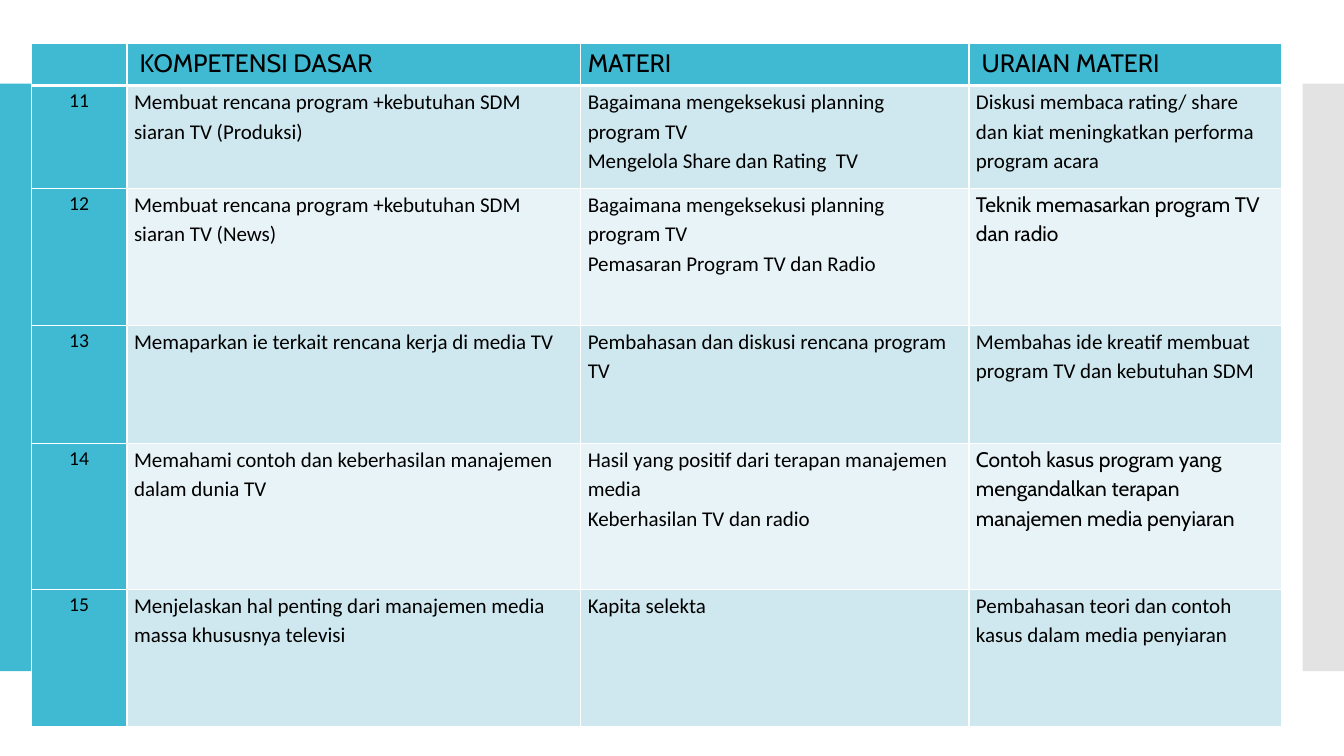
from lxml import etree
from pptx import Presentation
from pptx.dml.color import RGBColor
from pptx.enum.shapes import MSO_SHAPE
from pptx.enum.text import PP_ALIGN
from pptx.oxml.ns import qn
from pptx.util import Pt

PX = 9144
RECTANGLE = MSO_SHAPE.RECTANGLE
CENTER, LEFT = PP_ALIGN.CENTER, PP_ALIGN.LEFT
COLORS = {
    "accent": "40BAD2",
    "side": "C8C8C8",
    "odd": "CFE7EE",
    "even": "E8F3F7",
    "text": "000000",
    "border": "FFFFFF",
}
COLUMN_WIDTHS = [95, 450, 385, 310]
ROW_HEIGHTS = [42, 102, 136, 117, 145, 136]
HEADINGS = ["", " KOMPETENSI DASAR", "MATERI", " URAIAN MATERI"]
MEETINGS = [
    ["11", "Membuat rencana program +kebutuhan SDM siaran TV (Produksi)",
     "Bagaimana mengeksekusi planning program TV\nMengelola Share dan Rating  TV",
     "Diskusi membaca rating/ share dan kiat meningkatkan performa program acara"],
    ["12", "Membuat rencana program +kebutuhan SDM siaran TV (News)",
     "Bagaimana mengeksekusi planning program TV\nPemasaran Program TV dan Radio",
     "Teknik memasarkan program TV dan radio"],
    ["13", "Memaparkan ie terkait rencana kerja di media TV",
     "Pembahasan dan diskusi rencana program TV",
     "Membahas ide kreatif membuat program TV dan kebutuhan SDM"],
    ["14", "Memahami contoh dan keberhasilan manajemen dalam dunia TV",
     "Hasil yang positif dari terapan manajemen media\nKeberhasilan TV dan radio",
     "Contoh kasus program yang mengandalkan terapan manajemen media penyiaran"],
    ["15", "Menjelaskan hal penting dari manajemen media massa khususnya televisi",
     "Kapita selekta",
     "Pembahasan teori dan contoh kasus dalam media penyiaran"],
]


def rgb(name):
    """Return the named color."""
    return RGBColor.from_string(COLORS[name])


def add_side_bar(slide, box, color, opacity=100):
    """Draw a plain bar in the given box."""
    shape = slide.shapes.add_shape(RECTANGLE, *(length * PX for length in box))
    shape.shadow.inherit = False
    shape.line.fill.background()
    shape.fill.solid()
    shape.fill.fore_color.rgb = rgb(color)
    if opacity < 100:
        color_element = next(shape.element.spPr.iter(qn("a:srgbClr")))
        etree.SubElement(color_element, qn("a:alpha"), val=str(opacity * 1000))


def set_borders(cell, top, bottom):
    """Line the cell in white, with top and bottom widths in points."""
    properties = cell._tc.get_or_add_tcPr()
    sides = [("a:lnL", 1), ("a:lnR", 1), ("a:lnT", top), ("a:lnB", bottom)]
    for position, (tag, width) in enumerate(sides):
        line = etree.Element(qn(tag), w=str(Pt(width)))
        fill = etree.SubElement(line, qn("a:solidFill"))
        etree.SubElement(fill, qn("a:srgbClr"), val=COLORS["border"])
        properties.insert(position, line)


def write_cell(cell, text, size, font, alignment):
    """Write each line of the text as a paragraph of the cell."""
    cell.margin_left = cell.margin_right = 7 * PX
    cell.margin_top = cell.margin_bottom = 0
    frame = cell.text_frame
    for number, words in enumerate(text.split("\n")):
        paragraph = frame.add_paragraph() if number else frame.paragraphs[0]
        paragraph.alignment = alignment
        paragraph.line_spacing = 1.15
        if words:
            run = paragraph.add_run()
            run.text = words
            run.font.size = Pt(size)
            run.font.name = font
            run.font.bold = False
            run.font.color.rgb = rgb("text")


def cell_style(row, column):
    """Return fill, text size, font and alignment for a table position."""
    if row == 0:
        return "accent", 18, "Cabin", LEFT
    if column == 0:
        return "accent", 14, "Calibri", CENTER
    even = row % 2 == 0
    font = "Cabin" if even and column == 3 else "Calibri"
    return "even" if even else "odd", 15, font, LEFT


def add_meeting_table(slide, left, top):
    """Build the table of meetings from its top left corner."""
    rows = [HEADINGS] + MEETINGS
    table = slide.shapes.add_table(
        len(rows), len(HEADINGS), left * PX, top * PX,
        sum(COLUMN_WIDTHS) * PX, sum(ROW_HEIGHTS) * PX).table
    table.first_row = table.horz_banding = False
    for column, width in zip(table.columns, COLUMN_WIDTHS):
        column.width = width * PX
    for row, height in zip(table.rows, ROW_HEIGHTS):
        row.height = height * PX
    for row, texts in enumerate(rows):
        for column, text in enumerate(texts):
            cell = table.cell(row, column)
            fill, size, font, alignment = cell_style(row, column)
            cell.fill.solid()
            cell.fill.fore_color.rgb = rgb(fill)
            set_borders(cell, 3 if row == 1 else 1, 3 if row == 0 else 1)
            write_cell(cell, text, size, font, alignment)


def main():
    """Build and save the slide."""
    presentation = Presentation()
    presentation.slide_width = 1333 * PX
    presentation.slide_height = 750 * PX
    slide = presentation.slides.add_slide(presentation.slide_layouts[6])
    add_side_bar(slide, (0, 83, 377, 583), "accent")
    add_side_bar(slide, (1292, 83, 41, 583), "side", opacity=50)
    add_meeting_table(slide, 31, 43)
    presentation.save("out.pptx")


if __name__ == "__main__":
    main()
